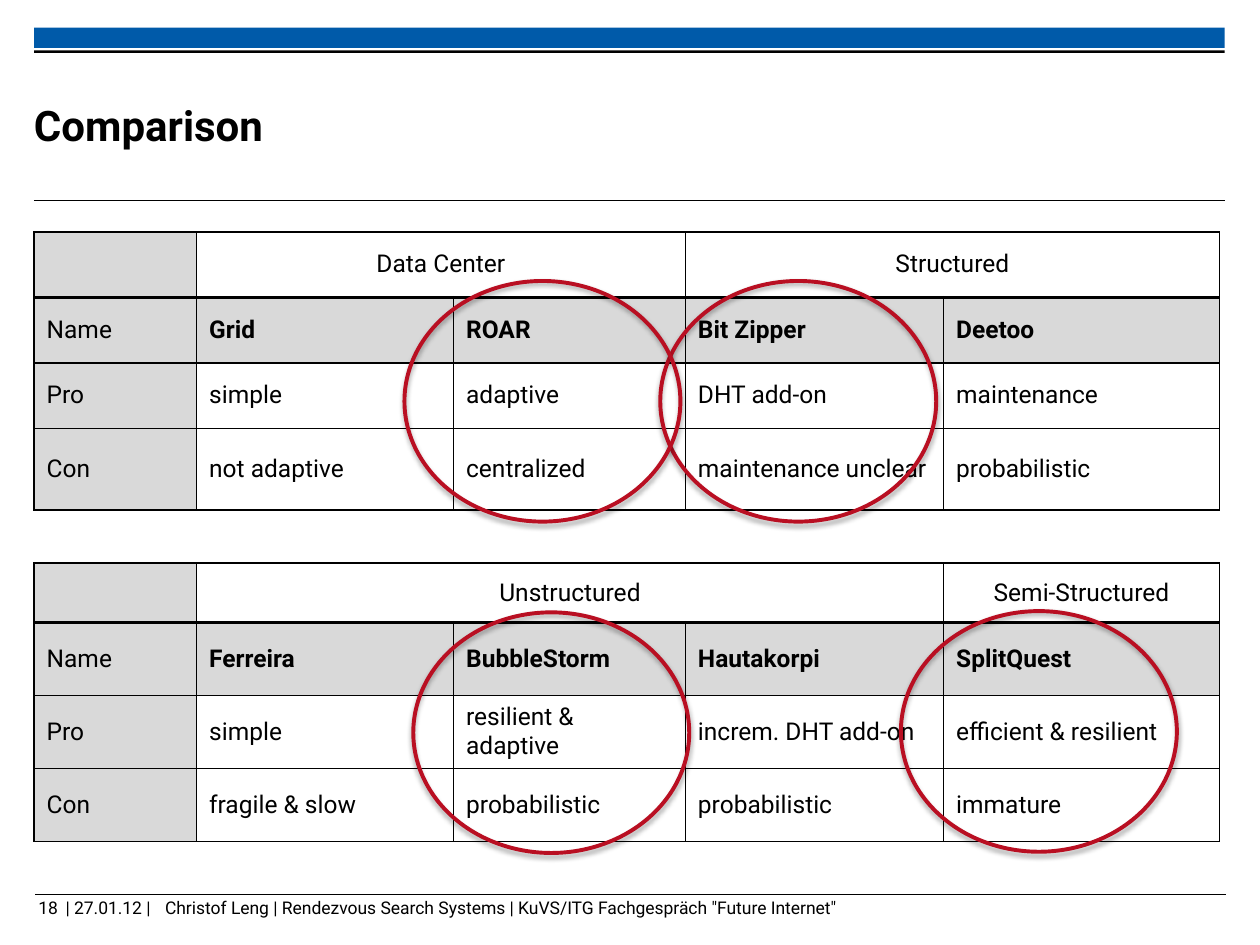
from lxml import etree
from pptx import Presentation
from pptx.dml.color import RGBColor
from pptx.enum.shapes import MSO_CONNECTOR, MSO_SHAPE
from pptx.enum.text import MSO_ANCHOR, PP_ALIGN
from pptx.oxml import parse_xml
from pptx.oxml.ns import nsdecls, qn
from pptx.util import Inches, Pt

COLORS = {
    "black": "000000",
    "blue": "005AA9",
    "gray": "D9D9D9",
    "red": "B90F22",
}
FONT = "Roboto"
LEFT = 0.27
BAR_WIDTH = 9.45
COLUMN_WIDTHS = [1.29, 2.04, 1.84, 2.05, 2.19]
FOOTER_TOP = 7.12

# Each header group is (label, number of columns).
STRUCTURED_GROUPS = [("", 1), ("Data Center", 2), ("Structured", 2)]
STRUCTURED_ROWS = [
    ["Name", "Grid", "ROAR", "Bit Zipper", "Deetoo"],
    ["Pro", "simple", "adaptive", "DHT add-on", "maintenance"],
    ["Con", "not adaptive", "centralized", "maintenance unclear", "probabilistic"],
]
UNSTRUCTURED_GROUPS = [("", 1), ("Unstructured", 3), ("Semi-Structured", 1)]
UNSTRUCTURED_ROWS = [
    ["Name", "Ferreira", "BubbleStorm", "Hautakorpi", "SplitQuest"],
    ["Pro", "simple", "resilient & adaptive", "increm. DHT add-on", "efficient & resilient"],
    ["Con", "fragile & slow", "probabilistic", "probabilistic", "immature"],
]
HIGHLIGHTS = [(3.28, 4.86), (7.15, 4.85), (5.24, 2.23), (3.21, 2.23)]


def color(name):
    return RGBColor.from_string(COLORS[name])


def write_text(text_frame, text, size=14, bold=False, align=PP_ALIGN.LEFT):
    paragraph = text_frame.paragraphs[0]
    paragraph.alignment = align
    run = paragraph.add_run()
    run.text = text
    run.font.name = FONT
    run.font.size = Pt(size)
    run.font.bold = bold
    run.font.color.rgb = color("black")


def set_borders(cell, top=1, bottom=1):
    """Draw all four cell edges; widths are in points."""
    properties = cell._tc.get_or_add_tcPr()
    for side, width in (("L", 1), ("R", 1), ("T", top), ("B", bottom)):
        properties.append(parse_xml(
            f'<a:ln{side} {nsdecls("a")} w="{Pt(width)}"><a:solidFill>'
            f'<a:srgbClr val="{COLORS["black"]}"/></a:solidFill></a:ln{side}>'
        ))


class SlideBuilder:
    def __init__(self, slide):
        self.slide = slide

    def bar(self, top, height, fill):
        shape = self.slide.shapes.add_shape(
            MSO_SHAPE.RECTANGLE, Inches(LEFT), Inches(top), Inches(BAR_WIDTH), Inches(height)
        )
        shape.shadow.inherit = False
        shape.fill.solid()
        shape.fill.fore_color.rgb = color(fill)
        shape.line.fill.background()

    def rule(self, left, top):
        line = self.slide.shapes.add_connector(
            MSO_CONNECTOR.STRAIGHT,
            Inches(left), Inches(top), Inches(left + BAR_WIDTH), Inches(top),
        )
        line.line.color.rgb = color("black")
        line.line.width = Pt(0.6)
        etree.SubElement(line._element.spPr, qn("a:effectLst"))

    def text(self, text, left, top, width, height, wrap=False,
             anchor=MSO_ANCHOR.TOP, **text_format):
        box = self.slide.shapes.add_textbox(
            Inches(left), Inches(top), Inches(width), Inches(height)
        )
        frame = box.text_frame
        frame.word_wrap = wrap
        frame.vertical_anchor = anchor
        frame.margin_left = frame.margin_top = frame.margin_right = frame.margin_bottom = 0
        write_text(frame, text, **text_format)

    def comparison_table(self, top, row_heights, groups, rows):
        """Add a table with a merged group header above the name, pro and con rows."""
        table = self.slide.shapes.add_table(
            len(row_heights), len(COLUMN_WIDTHS), Inches(LEFT), Inches(top),
            Inches(sum(COLUMN_WIDTHS)), Inches(sum(row_heights)),
        ).table
        for column, width in zip(table.columns, COLUMN_WIDTHS):
            column.width = Inches(width)
        for row, height in zip(table.rows, row_heights):
            row.height = Inches(height)

        for row in range(len(row_heights)):
            for column in range(len(COLUMN_WIDTHS)):
                cell = table.cell(row, column)
                cell.vertical_anchor = MSO_ANCHOR.MIDDLE
                set_borders(cell, top=2 if row == 1 else 1, bottom=2 if row == 0 else 1)
                if row == 1 or column == 0:
                    cell.fill.solid()
                    cell.fill.fore_color.rgb = color("gray")
                else:
                    cell.fill.background()
                if row > 0:
                    write_text(cell.text_frame, rows[row - 1][column],
                               bold=row == 1 and column > 0)

        column = 0
        for label, span in groups:
            cell = table.cell(0, column)
            if span > 1:
                cell.merge(table.cell(0, column + span - 1))
            if label:
                write_text(cell.text_frame, label, align=PP_ALIGN.CENTER)
            column += span

    def highlight(self, left, top):
        shape = self.slide.shapes.add_shape(
            MSO_SHAPE.OVAL, Inches(left), Inches(top), Inches(2.19), Inches(1.91)
        )
        shape.fill.background()
        shape.line.color.rgb = color("red")
        shape.line.width = Pt(2.25)
        shape._element.spPr.append(parse_xml(
            f'<a:effectLst {nsdecls("a")}><a:outerShdw blurRad="{Pt(3.1)}" dist="{Pt(1.8)}" '
            f'dir="5400000" rotWithShape="0"><a:srgbClr val="{COLORS["black"]}">'
            '<a:alpha val="35000"/></a:srgbClr></a:outerShdw></a:effectLst>'
        ))


def main():
    presentation = Presentation()
    presentation.slide_width = Inches(10)
    presentation.slide_height = Inches(7.5)
    builder = SlideBuilder(presentation.slides.add_slide(presentation.slide_layouts[6]))

    builder.bar(0.22, 0.16, "blue")
    builder.rule(LEFT, 1.59)
    builder.rule(0.28, 7.1)
    builder.bar(0.4, 0.02, "black")
    builder.text("Comparison", LEFT, 0.53, 7.56, 0.92, wrap=True,
                 anchor=MSO_ANCHOR.MIDDLE, size=24, bold=True)

    builder.comparison_table(1.84, [0.52, 0.52, 0.52, 0.65], STRUCTURED_GROUPS, STRUCTURED_ROWS)
    builder.text("| 27.01.12 |", 0.52, FOOTER_TOP, 0.79, 0.23, size=10)
    builder.text('Christof Leng | Rendezvous Search Systems | KuVS/ITG Fachgespräch "Future Internet"',
                 1.31, FOOTER_TOP, 7.62, 0.23, size=10)
    builder.text("18", LEFT, FOOTER_TOP, 0.19, 0.23, size=10, align=PP_ALIGN.RIGHT)
    builder.comparison_table(4.47, [0.47, 0.58, 0.58, 0.58], UNSTRUCTURED_GROUPS, UNSTRUCTURED_ROWS)

    for left, top in HIGHLIGHTS:
        builder.highlight(left, top)

    presentation.save("out.pptx")


if __name__ == "__main__":
    main()
